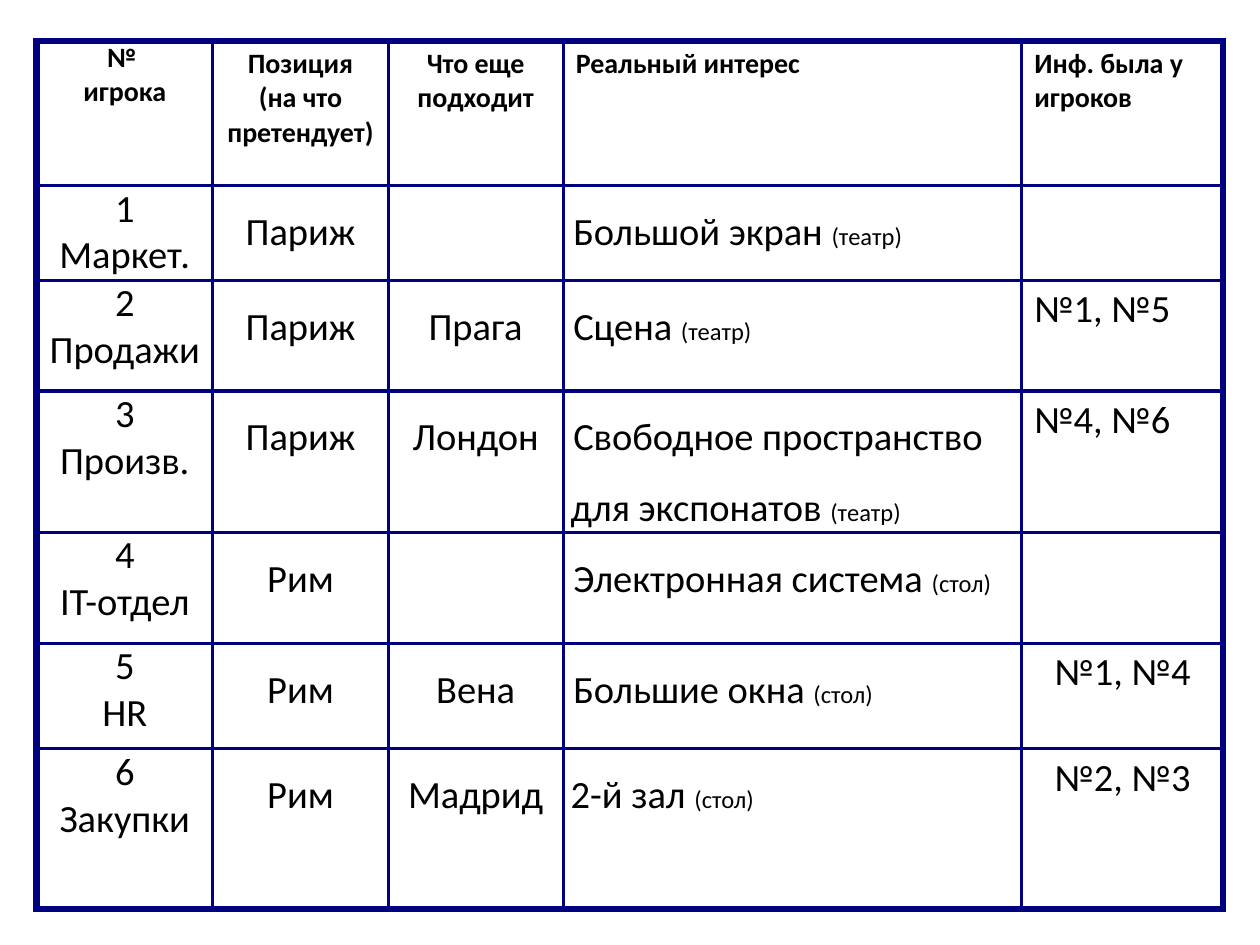
from dataclasses import dataclass

from pptx import Presentation
from pptx.dml.color import RGBColor
from pptx.enum.text import PP_ALIGN as Align
from pptx.oxml.ns import qn
from pptx.util import Inches, Pt
from lxml.etree import SubElement


@dataclass(frozen=True)
class Theme:
    """Colours, font and type sizes."""
    font: str = "Calibri"
    ink: str = "000000"
    rule: str = "000080"
    head: int = 16
    body: int = 22
    note: int = 14
    thin: int = 2
    thick: int = 4


THEME = Theme()
SLIDE = (Inches(10), Inches(7.5))
BOX = (0.029, 0.043, 0.942, 0.919)
COLS = (1.4, 1.39, 1.39, 3.64, 1.6)
ROWS = (1.15, 0.75, 0.88, 1.12, 0.88, 0.84, 1.27)
TIGHT, ROOMY = (0.06, 0), (0.1, 0.05)
HEADS = (
    (("№ \vигрока",), Align.CENTER, TIGHT),
    (("Позиция", "(на что претендует)"), Align.CENTER, ROOMY),
    (("Что еще подходит",), Align.CENTER, ROOMY),
    (("Реальный интерес",), Align.LEFT, ROOMY),
    (("Инф. была у игроков",), Align.LEFT, ROOMY),
)
PLAYERS = (
    ("Маркет.", "Париж", "", "Большой экран ", "(театр)", "", Align.LEFT),
    ("Продажи", "Париж", "Прага", "Сцена ", "(театр)", "№1, №5", Align.LEFT),
    ("Произв.", "Париж", "Лондон", "Свободное пространство для экспонатов ",
     "(театр)", "№4, №6", Align.LEFT),
    ("IT-отдел", "Рим", "", "Электронная система ", "(стол)", "", Align.LEFT),
    ("HR", "Рим", "Вена", "Большие окна ", "(стол)", "№1, №4", Align.CENTER),
    ("Закупки", "Рим", "Мадрид", "2-й зал ", "(стол)", "№2, №3", Align.CENTER),
)


def add_run(p, text, size, bold=False):
    """Add one styled run to a paragraph."""
    r = p.add_run()
    r.text = text
    r.font.name, r.font.size, r.font.bold = THEME.font, Pt(size), bold
    r.font.color.rgb = RGBColor.from_string(THEME.ink)


def fill_cell(cell, paras, align, inset, size, bold=False, spacing=None, indent=0):
    """Write paragraphs, each a list of texts whose second one is a note."""
    cell.margin_left = cell.margin_right = Inches(inset[0])
    cell.margin_top = cell.margin_bottom = Inches(inset[1])
    tf = cell.text_frame
    for i, texts in enumerate(paras):
        p = tf.add_paragraph() if i else tf.paragraphs[0]
        p.alignment = align
        if spacing:
            p.line_spacing = spacing
        if indent:
            p._p.get_or_add_pPr().set("indent", str(Inches(indent)))
        for text, pt in zip(texts, (size, THEME.note)):
            for j, line in enumerate(text.split("\v")):
                if j:
                    p.add_line_break()
                add_run(p, line, pt, bold)


def rule_cell(cell, row, col):
    """Draw the cell's borders, thick on the outer edge of the table."""
    outer = {"L": col == 0, "R": col == len(COLS) - 1,
             "T": row == 0, "B": row == len(ROWS) - 1}
    tcPr = cell._tc.get_or_add_tcPr()
    for side, edge in outer.items():
        width = Pt(THEME.thick if edge else THEME.thin)
        ln = SubElement(tcPr, qn(f"a:ln{side}"), w=str(width))
        fill = SubElement(ln, qn("a:solidFill"))
        SubElement(fill, qn("a:srgbClr"), val=THEME.rule)
    cell.fill.background()


def fill_header(table):
    """Write the column headings."""
    for col, (paras, align, inset) in enumerate(HEADS):
        fill_cell(table.cell(0, col), [[t] for t in paras], align, inset,
                  THEME.head, bold=True)


def fill_player(table, row, player):
    """Write one player's row."""
    dept, position, option, interest, place, known, align = player
    size = THEME.body
    fill_cell(table.cell(row, 0), [[str(row)], [dept]], Align.CENTER, TIGHT, size)
    for col, city in enumerate((position, option), 1):
        if city:
            fill_cell(table.cell(row, col), [[city]], Align.CENTER, TIGHT, size,
                      spacing=1.5)
    fill_cell(table.cell(row, 3), [[interest, place]], Align.LEFT, TIGHT, size,
              spacing=1.5, indent=0 if row == len(PLAYERS) else 0.02)
    if known:
        fill_cell(table.cell(row, 4), [[known]], align, ROOMY, size)


def add_players_table(s, box):
    """Place the table of players in a box given as shares of the slide."""
    x, y, w, h = (int(share * SLIDE[i % 2]) for i, share in enumerate(box))
    table = s.shapes.add_table(len(ROWS), len(COLS), x, y, w, h).table
    table.first_row = table.horz_banding = False
    for column, weight in zip(table.columns, COLS):
        column.width = int(w * weight / sum(COLS))
    for line, weight in zip(table.rows, ROWS):
        line.height = int(h * weight / sum(ROWS))
    fill_header(table)
    for row, player in enumerate(PLAYERS, 1):
        fill_player(table, row, player)
    for row in range(len(ROWS)):
        for col in range(len(COLS)):
            rule_cell(table.cell(row, col), row, col)


def main():
    """Build and save the slide."""
    prs = Presentation()
    prs.slide_width, prs.slide_height = SLIDE
    s = prs.slides.add_slide(prs.slide_layouts[6])
    add_players_table(s, BOX)
    prs.save("out.pptx")


if __name__ == "__main__":
    main()
